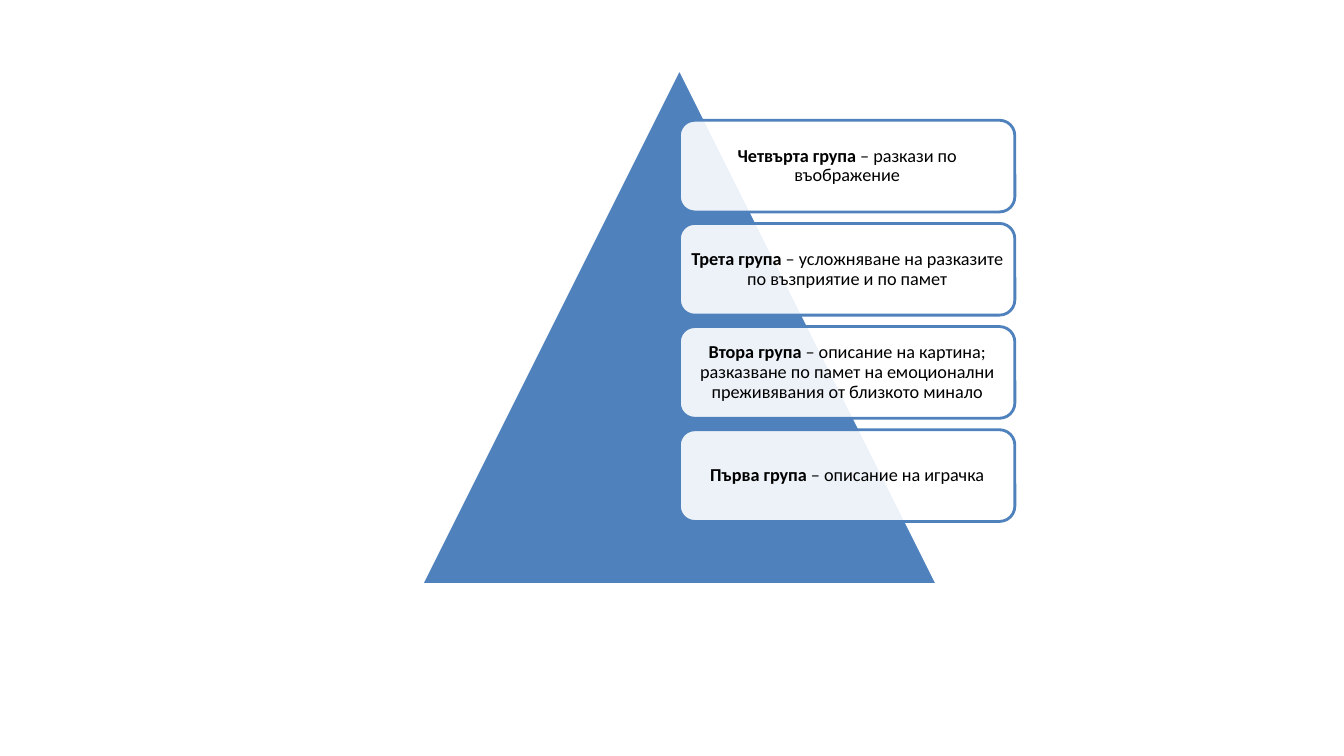
from dataclasses import dataclass

from lxml.etree import SubElement
from pptx import Presentation
from pptx.dml.color import RGBColor
from pptx.enum.shapes import MSO_SHAPE as Shape
from pptx.enum.text import MSO_ANCHOR as Anchor, PP_ALIGN as Align
from pptx.oxml.ns import qn
from pptx.util import Pt


@dataclass(frozen=True)
class Theme:
    blue: RGBColor = RGBColor(0x4F, 0x81, 0xBD)
    white: RGBColor = RGBColor(0xFF, 0xFF, 0xFF)
    black: RGBColor = RGBColor(0, 0, 0)
    font: str = "Calibri"
    label_size: int = 13
    card_opacity: int = 90


theme = Theme()


def add_filled_shape(kind, left, top, width, height, fill, line):
    shape = slide.shapes.add_shape(kind, Pt(left), Pt(top), Pt(width), Pt(height))
    shape.shadow.inherit = False
    shape.fill.solid()
    shape.fill.fore_color.rgb = fill
    shape.line.color.rgb = line
    shape.line.width = Pt(2)
    return shape


presentation = Presentation()
presentation.slide_width = Pt(960)
presentation.slide_height = Pt(540)
slide = presentation.slides.add_slide(presentation.slide_layouts[6])

# Pyramid
add_filled_shape(Shape.ISOSCELES_TRIANGLE, 301, 49, 368.6, 368.6, theme.blue, theme.white)

# Group cards, from the top of the pyramid down
groups = [
    ("Четвърта група", "разкази по въображение"),
    ("Трета група", "усложняване на разказите по възприятие и по памет"),
    ("Втора група", "описание на картина; разказване по памет на "
                    "емоционални преживявания от близкото минало"),
    ("Първа група", "описание на играчка"),
]
card_left, card_top, card_width, card_height = 485.3, 85.9, 239.6, 65.5
card_step = card_height * 1.125

for index, (name, description) in enumerate(groups):
    card = add_filled_shape(Shape.ROUNDED_RECTANGLE, card_left, card_top + index * card_step,
                            card_width, card_height, theme.white, theme.blue)
    fill_color = card.fill._xPr.find(qn("a:solidFill"))[0]
    SubElement(fill_color, qn("a:alpha"), val=str(theme.card_opacity * 1000))

    text_frame = card.text_frame
    text_frame.word_wrap = True
    text_frame.vertical_anchor = Anchor.MIDDLE
    text_frame.margin_left = text_frame.margin_right = Pt(3.6)
    text_frame.margin_top = text_frame.margin_bottom = Pt(3.6)

    paragraph = text_frame.paragraphs[0]
    paragraph.alignment = Align.CENTER
    paragraph.line_spacing = 0.9
    for text, bold in ((f"{name} ", True), (f"– {description}", False)):
        run = paragraph.add_run()
        run.text = text
        run.font.name = theme.font
        run.font.size = Pt(theme.label_size)
        run.font.bold = bold
        run.font.color.rgb = theme.black

presentation.save("out.pptx")
